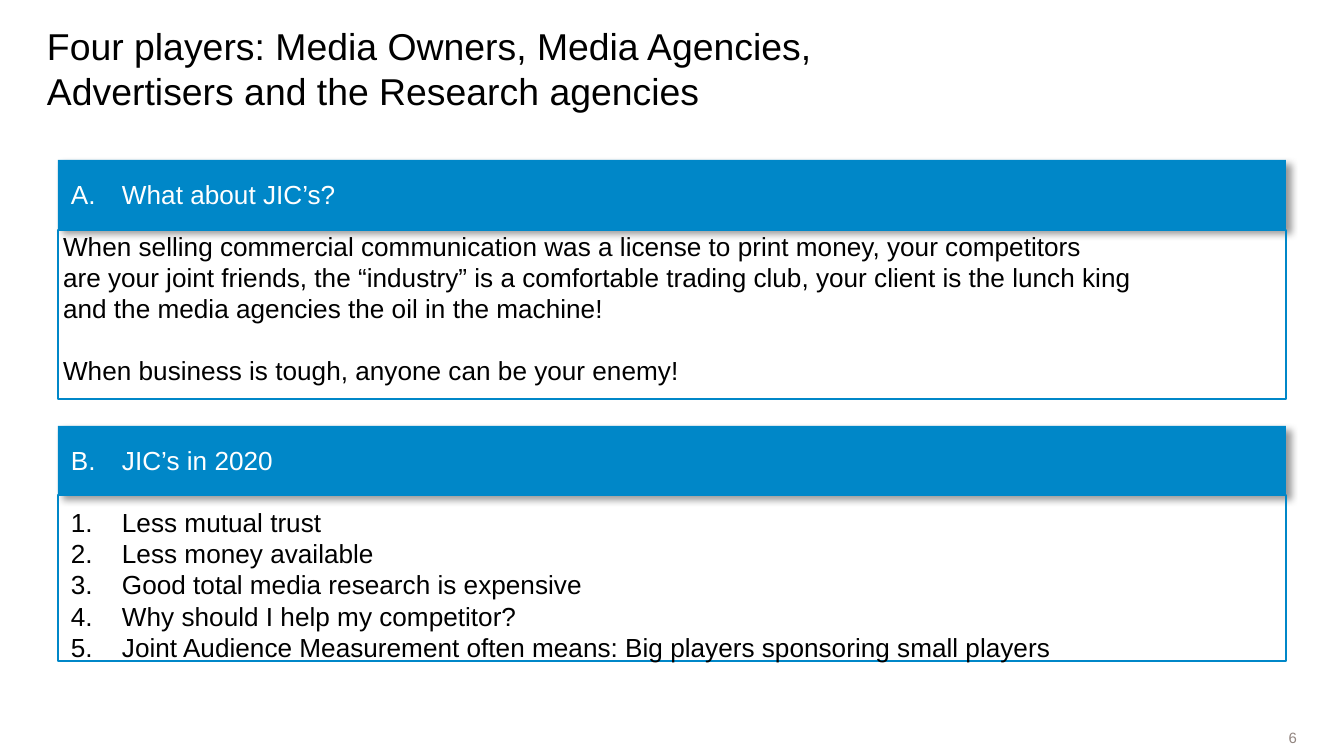
from lxml.etree import SubElement
from pptx import Presentation
from pptx.dml.color import RGBColor
from pptx.enum.shapes import MSO_SHAPE
from pptx.enum.text import MSO_ANCHOR, PP_ALIGN
from pptx.oxml import parse_xml
from pptx.oxml.ns import nsdecls, qn
from pptx.util import Pt

PX = 914400 / 134.4
BLUE = RGBColor(0x00, 0x87, 0xC8)
BLACK = RGBColor(0, 0, 0)
WHITE = RGBColor(255, 255, 255)
GREY = RGBColor(0x92, 0x85, 0x80)

LEFT, WIDTH = 58, 1228
HEADER_HEIGHT = 69
SHADOW = (
    f'<a:effectLst {nsdecls("a")}>'
    '<a:outerShdw blurRad="50800" dist="38100" dir="2700000" algn="tl" rotWithShape="0">'
    '<a:srgbClr val="000000"><a:alpha val="40000"/></a:srgbClr>'
    '</a:outerShdw></a:effectLst>'
)

deck = Presentation()
deck.slide_width, deck.slide_height = round(1344 * PX), round(756 * PX)
page = deck.slides.add_slide(deck.slide_layouts[6])


def add_box(left, top, width, height, fill=None, line=None):
    """Add a rectangle with the given fill and line, without a shadow."""
    frame = [round(length * PX) for length in (left, top, width, height)]
    box = page.shapes.add_shape(MSO_SHAPE.RECTANGLE, *frame)
    box.shadow.inherit = False
    if fill is None:
        box.fill.background()
    else:
        box.fill.solid()
        box.fill.fore_color.rgb = fill
    if line is None:
        box.line.fill.background()
    else:
        box.line.color.rgb = line
        box.line.width = Pt(0.75)
    return box


def write(box, text, size, color, anchor=MSO_ANCHOR.TOP, insets=(0, 0, 0, 0),
          numbering=None, start=1, align=PP_ALIGN.LEFT):
    """Set the text of a box, numbering its paragraphs if asked."""
    frame = box.text_frame
    frame.text = text
    frame.word_wrap = True
    frame.vertical_anchor = anchor
    (frame.margin_left, frame.margin_top,
     frame.margin_right, frame.margin_bottom) = [round(inset * PX) for inset in insets]
    for para in frame.paragraphs:
        para.alignment = align
        if numbering:
            properties = para._p.get_or_add_pPr()
            properties.set("marL", str(round(51 * PX)))
            properties.set("indent", str(round(-51 * PX)))
            SubElement(properties, qn("a:buFont"), typeface="+mj-lt")
            SubElement(properties, qn("a:buAutoNum"), type=numbering, startAt=str(start))
        for span in para.runs:
            span.font.name = "Arial"
            span.font.size = Pt(size)
            span.font.color.rgb = color


# Slide number
number = add_box(1106, 727, 191, 22, fill=WHITE)
write(number, "6", 8, GREY, MSO_ANCHOR.MIDDLE, align=PP_ALIGN.RIGHT)

# Title
title = page.shapes.add_textbox(*[round(length * PX) for length in (47, 28, 942, 85)])
write(title, "Four players: Media Owners, Media Agencies, Advertisers and the Research agencies",
      20, BLACK, MSO_ANCHOR.BOTTOM)

# Sections: a header bar above an outlined panel
panels = []
sections = [(1, "What about JIC’s?", 160, 230, 169), (2, "JIC’s in 2020", 426, 495, 166)]
for start, heading, top, panel_top, panel_height in sections:
    header = add_box(LEFT, top, WIDTH, HEADER_HEIGHT, fill=BLUE)
    properties = header._element.spPr
    properties.replace(properties.find(qn("a:effectLst")), parse_xml(SHADOW))
    write(header, heading, 14, WHITE, MSO_ANCHOR.MIDDLE, (13, 11, 13, 11),
          "alphaUcPeriod", start)
    panels.append(add_box(LEFT, panel_top, WIDTH, panel_height, line=BLUE))

# Section A text
story = page.shapes.add_textbox(*[round(length * PX) for length in (63, 230, 1212, 134)])
write(story,
      "When selling commercial communication was a license to print money, your competitors\v"
      "are your joint friends, the “industry” is a comfortable trading club, "
      "your client is the lunch king\v"
      "and the media agencies the oil in the machine!\n"
      "When business is tough, anyone can be your enemy!",
      14, BLACK)
story.text_frame.word_wrap = False
story.text_frame.paragraphs[1].space_before = Pt(16)

# Section B list
points = [
    "Less mutual trust",
    "Less money available",
    "Good total media research is expensive",
    "Why should I help my competitor?",
    "Joint Audience Measurement often means: Big players sponsoring small players",
]
write(panels[1], "\n".join(points), 14, BLACK, insets=(13, 11, 13, 7),
      numbering="arabicPeriod")

deck.save("out.pptx")
